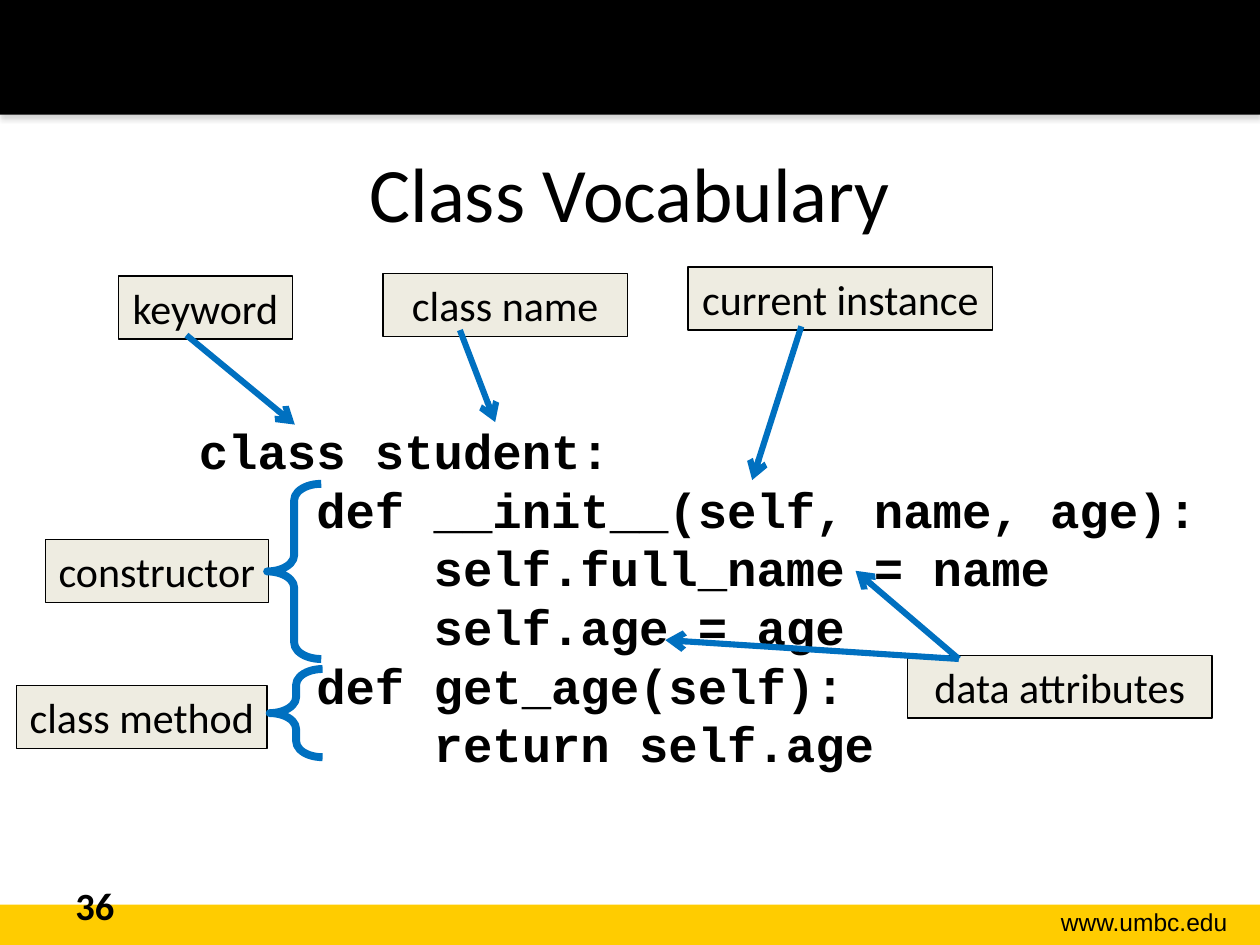
from dataclasses import dataclass

from lxml.etree import SubElement
from pptx import Presentation
from pptx.dml.color import RGBColor
from pptx.enum.shapes import MSO_CONNECTOR, MSO_SHAPE
from pptx.enum.text import MSO_ANCHOR, PP_ALIGN
from pptx.oxml.ns import qn
from pptx.util import Inches, Pt


@dataclass(frozen=True)
class Theme:
    black: str = "000000"
    gold: str = "FFCC00"
    label_fill: str = "EEECE1"
    accent: str = "0070C0"
    shadow: str = "808080"
    body_font: str = "Calibri"
    code_font: str = "Courier New"
    footer_font: str = "Arial"
    title_size: int = 44
    code_size: int = 28
    label_size: int = 24
    number_size: int = 22
    footer_size: int = 14
    code_leading: float = 33.5
    border_width: float = 0.75
    arrow_width: float = 3.5
    brace_width: float = 4.5


THEME = Theme()
WIDTH, HEIGHT = 10, 7.5
HEADER_HEIGHT = 0.91
FOOTER_HEIGHT = 0.32
LABEL_HEIGHT = 0.5
BRACE_CURVE = 0.302

TITLE = "Class Vocabulary"
PAGE_NUMBER = "36"
WEBSITE = "www.umbc.edu"
CODE = [
    "class student:",
    "    def __init__(self, name, age):",
    "        self.full_name = name",
    "        self.age = age",
    "    def get_age(self):",
    "        return self.age",
]
LABELS = [
    ("keyword", 0.94, 2.19, 1.38),
    ("class name", 3.04, 2.17, 1.94),
    ("current instance", 5.46, 2.12, 2.42),
    ("constructor", 0.36, 4.28, 1.77),
    ("data attributes", 7.2, 5.2, 2.42),
    ("class method", 0.13, 5.44, 1.99),
]
ARROWS = [
    ((1.48, 2.66), (2.34, 3.37)),
    ((3.65, 2.62), (3.93, 3.35)),
    ((6.36, 2.59), (5.97, 3.81)),
    ((7.61, 5.23), (6.79, 4.53)),
    ((7.61, 5.23), (5.28, 5.08)),
]
BRACES = [(2.12, 3.84, 0.43, 1.39), (2.14, 5.31, 0.42, 0.7)]


def color(value):
    return RGBColor.from_string(value)


def set_text(shape, lines, font, size, bold=False, align=PP_ALIGN.LEFT,
             anchor=MSO_ANCHOR.TOP, wrap=True, leading=None):
    frame = shape.text_frame
    frame.word_wrap = wrap
    frame.vertical_anchor = anchor
    frame.text = "\n".join(lines)
    for paragraph in frame.paragraphs:
        paragraph.alignment = align
        if leading:
            paragraph.line_spacing = Pt(leading)
        paragraph.font.name = font
        paragraph.font.size = Pt(size)
        paragraph.font.bold = bold
        paragraph.font.color.rgb = color(THEME.black)


def add_text(slide, box, lines, font, size, **options):
    shape = slide.shapes.add_textbox(*map(Inches, box))
    set_text(shape, lines, font, size, **options)


def add_shape(slide, kind, box, fill=None, line=None, line_width=0):
    shape = slide.shapes.add_shape(kind, *map(Inches, box))
    shape.shadow.inherit = False
    if fill:
        shape.fill.solid()
        shape.fill.fore_color.rgb = color(fill)
    else:
        shape.fill.background()
    if line:
        shape.line.color.rgb = color(line)
        shape.line.width = Pt(line_width)
    else:
        shape.line.fill.background()
    return shape


def add_header_shadow(shape):
    effects = shape.element.spPr.find(qn("a:effectLst"))
    shadow = SubElement(effects, qn("a:outerShdw"), blurRad=str(Pt(3.1)),
                        dist=str(Pt(1.8)), dir="5400000", rotWithShape="0")
    tint = SubElement(shadow, qn("a:srgbClr"), val=THEME.shadow)
    SubElement(tint, qn("a:alpha"), val="35000")


def add_arrow(slide, start, end):
    arrow = slide.shapes.add_connector(
        MSO_CONNECTOR.STRAIGHT, *map(Inches, (*start, *end)))
    arrow.line.color.rgb = color(THEME.accent)
    arrow.line.width = Pt(THEME.arrow_width)
    SubElement(arrow.line._get_or_add_ln(), qn("a:tailEnd"), type="arrow")
    SubElement(arrow.element.spPr, qn("a:effectLst"))


def main():
    presentation = Presentation()
    presentation.slide_width = Inches(WIDTH)
    presentation.slide_height = Inches(HEIGHT)
    slide = presentation.slides.add_slide(presentation.slide_layouts[6])

    add_shape(slide, MSO_SHAPE.RECTANGLE,
              (0, HEIGHT - FOOTER_HEIGHT, WIDTH, FOOTER_HEIGHT), THEME.gold)
    header = add_shape(slide, MSO_SHAPE.RECTANGLE,
                       (0, 0, WIDTH, HEADER_HEIGHT), THEME.black)
    add_header_shadow(header)

    add_text(slide, (7.85, 7.15, 1.99, 0.34), [WEBSITE], THEME.footer_font,
             THEME.footer_size, align=PP_ALIGN.RIGHT)
    add_text(slide, (0.5, 0.9, WIDTH - 1, 1.25), [TITLE], THEME.body_font,
             THEME.title_size, align=PP_ALIGN.CENTER, anchor=MSO_ANCHOR.MIDDLE)
    add_text(slide, (0.5, 6.95, 2.33, 0.4), [PAGE_NUMBER], THEME.body_font,
             THEME.number_size, bold=True)
    add_text(slide, (1.48, 3.29, 8.21, 2.93), CODE, THEME.code_font,
             THEME.code_size, bold=True, leading=THEME.code_leading)

    for text, left, top, width in LABELS:
        label = add_shape(slide, MSO_SHAPE.RECTANGLE,
                          (left, top, width, LABEL_HEIGHT), THEME.label_fill,
                          THEME.black, THEME.border_width)
        set_text(label, [text], THEME.body_font, THEME.label_size,
                 align=PP_ALIGN.CENTER, wrap=False)
    for start, end in ARROWS:
        add_arrow(slide, start, end)
    for box in BRACES:
        brace = add_shape(slide, MSO_SHAPE.LEFT_BRACE, box, line=THEME.accent,
                          line_width=THEME.brace_width)
        brace.adjustments[0] = BRACE_CURVE

    presentation.save("out.pptx")


if __name__ == "__main__":
    main()
